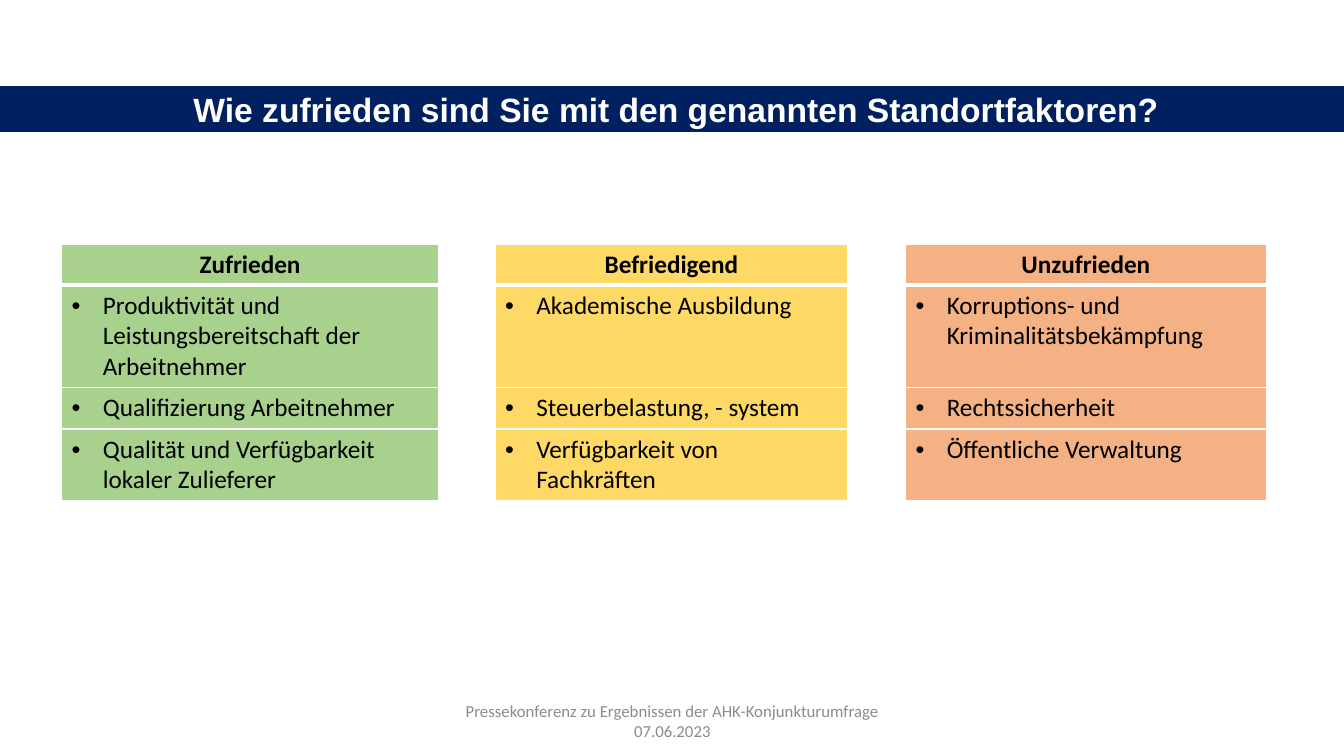
import pptx
import pptx.dml.color
import pptx.enum.text
import pptx.util
from pptx.oxml.ns import qn
from lxml import etree

NAVY = pptx.dml.color.RGBColor(0x00, 0x20, 0x60)
WHITE = pptx.dml.color.RGBColor(0xFF, 0xFF, 0xFF)
BLACK = pptx.dml.color.RGBColor(0x00, 0x00, 0x00)
GRAY = pptx.dml.color.RGBColor(0x8C, 0x8C, 0x8C)
GREEN = pptx.dml.color.RGBColor(0xA9, 0xD1, 0x8E)
YELLOW = pptx.dml.color.RGBColor(0xFF, 0xD9, 0x66)
ORANGE = pptx.dml.color.RGBColor(0xF4, 0xB1, 0x83)
CENTER = pptx.enum.text.PP_ALIGN.CENTER
LEFT = pptx.enum.text.PP_ALIGN.LEFT
MIDDLE = pptx.enum.text.MSO_ANCHOR.MIDDLE

deck = pptx.Presentation()
deck.slide_width = pptx.util.Inches(13.33)
deck.slide_height = pptx.util.Inches(7.5)
across = deck.slide_width / 100
down = deck.slide_height / 100
slide = deck.slides.add_slide(deck.slide_layouts[5])


def style(paragraph, align, color, **font_format):
    paragraph.alignment = align
    for key, value in font_format.items():
        setattr(paragraph.font, key, value)
    paragraph.font.color.rgb = color


def add_border(cell, side, points):
    border = etree.SubElement(cell._tc.get_or_add_tcPr(), qn(side), w=str(pptx.util.Pt(points)))
    fill = etree.SubElement(border, qn("a:solidFill"))
    etree.SubElement(fill, qn("a:srgbClr"), val=str(WHITE))


question = slide.shapes.title
question_place = {"left": 0, "top": int(11.47 * down), "width": deck.slide_width, "height": int(5.87 * down)}
for key, value in question_place.items():
    setattr(question, key, value)
question.fill.solid()
question.fill.fore_color.rgb = NAVY
question.line.color.rgb = NAVY
question.line.width = pptx.util.Pt(1)
question.text_frame.text = "Wie zufrieden sind Sie mit den genannten Standortfaktoren?"
question_frame = {
    "auto_size": pptx.enum.text.MSO_AUTO_SIZE.NONE,
    "vertical_anchor": MIDDLE,
    "margin_left": pptx.util.Inches(0.18),
    "margin_top": 0,
    "margin_bottom": 0,
}
for key, value in question_frame.items():
    setattr(question.text_frame, key, value)
style(question.text_frame.paragraphs[0], CENTER, WHITE, name="Arial", size=pptx.util.Pt(24), bold=True)

ratings = [
    (GREEN, ["Zufrieden", "Produktivität und Leistungsbereitschaft der Arbeitnehmer",
             "Qualifizierung Arbeitnehmer", "Qualität und Verfügbarkeit lokaler Zulieferer"]),
    (YELLOW, ["Befriedigend", "Akademische Ausbildung",
              "Steuerbelastung, - system", "Verfügbarkeit von Fachkräften"]),
    (ORANGE, ["Unzufrieden", "Korruptions- und Kriminalitätsbekämpfung",
              "Rechtssicherheit", "Öffentliche Verwaltung"]),
]
column_shares = [28.05, 4.2, 26.26, 4.28, 26.86]
row_shares = [5.4, 13.5, 5.5, 9.4]
factors = slide.shapes.add_table(
    len(row_shares), len(column_shares), int(4.58 * across), int(32.3 * down),
    int(sum(column_shares) * across), int(sum(row_shares) * down)).table
factors.first_row = False
factors.horz_banding = False
for column, share in zip(factors.columns, column_shares):
    column.width = int(share * across)
for row, share in zip(factors.rows, row_shares):
    row.height = int(share * down)
    for gap in (1, 3):
        row.cells[gap].fill.background()

for rating_index, (color, entries) in enumerate(ratings):
    for row_index, entry in enumerate(entries):
        is_heading = row_index == 0
        cell = factors.cell(row_index, 2 * rating_index)
        cell.text = entry
        paragraph = cell.text_frame.paragraphs[0]
        if not is_heading:
            properties = paragraph._p.get_or_add_pPr()
            indent = pptx.util.Inches(0.31)
            properties.set("marL", str(indent))
            properties.set("indent", str(-indent))
            etree.SubElement(properties, qn("a:buFont"), typeface="Arial")
            etree.SubElement(properties, qn("a:buChar"), char="•")
        style(paragraph, CENTER if is_heading else LEFT, BLACK,
              name="Calibri", size=pptx.util.Pt(18), bold=is_heading)
        if rating_index == 0:
            add_border(cell, "a:lnL", 1)
        if rating_index == len(ratings) - 1:
            add_border(cell, "a:lnR", 1)
        add_border(cell, "a:lnT", 3 if row_index == 1 else 1)
        add_border(cell, "a:lnB", 3 if is_heading else 1)
        cell.fill.solid()
        cell.fill.fore_color.rgb = color

occasion = slide.shapes.add_textbox(
    int(33.15 * across), int(92.67 * down), int(33.75 * across), int(5.33 * down)).text_frame
occasion.word_wrap = True
occasion.vertical_anchor = MIDDLE
occasion.text = "Pressekonferenz zu Ergebnissen der AHK-Konjunkturumfrage\v07.06.2023"
style(occasion.paragraphs[0], CENTER, GRAY, name="Calibri", size=pptx.util.Pt(12))

deck.save("out.pptx")
